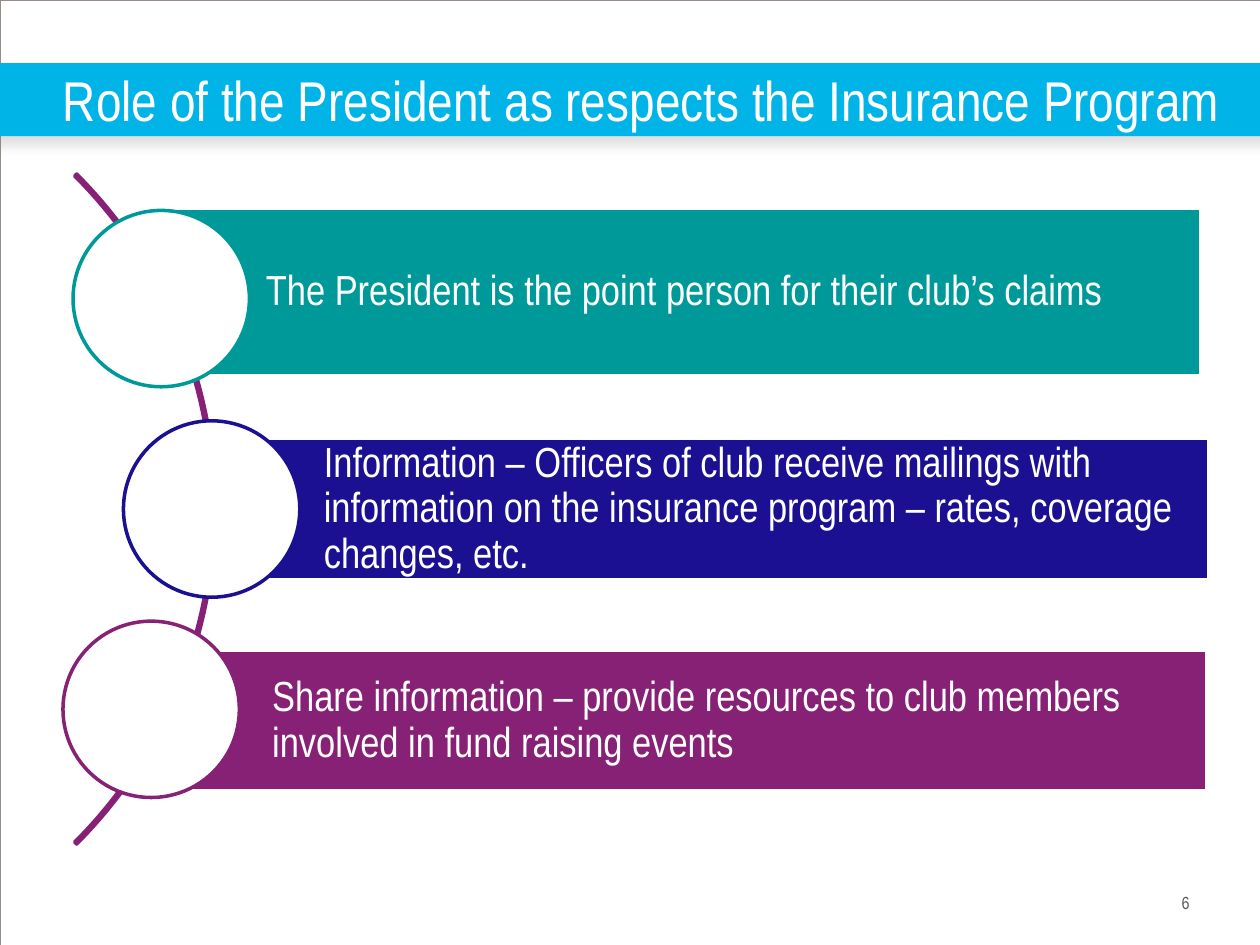
from dataclasses import dataclass

from lxml import etree
from pptx import Presentation
from pptx.dml.color import RGBColor
from pptx.enum.shapes import MSO_SHAPE
from pptx.enum.text import MSO_ANCHOR, PP_ALIGN
from pptx.oxml.ns import qn
from pptx.shapes.autoshape import Shape
from pptx.slide import Slide
from pptx.util import Inches, Pt

RECTANGLE = MSO_SHAPE.RECTANGLE
OVAL = MSO_SHAPE.OVAL
BLOCK_ARC = MSO_SHAPE.BLOCK_ARC
MIDDLE = MSO_ANCHOR.MIDDLE
TOP = MSO_ANCHOR.TOP
LEFT = PP_ALIGN.LEFT
RIGHT = PP_ALIGN.RIGHT

WHITE = RGBColor(0xFF, 0xFF, 0xFF)
SKY = RGBColor(0x01, 0xB4, 0xE7)
TEAL = RGBColor(0x00, 0x99, 0x99)
NAVY = RGBColor(0x1B, 0x10, 0x91)
PLUM = RGBColor(0x87, 0x21, 0x75)
TAUPE = RGBColor(0x95, 0x8D, 0x85)
GRAY = RGBColor(0x58, 0x58, 0x5A)

FONT = "Arial Narrow"
SLIDE_WIDTH = Inches(10)
SLIDE_HEIGHT = Inches(7.5)
COLUMN = SLIDE_WIDTH / 100
ROW = SLIDE_HEIGHT / 75
CIRCLE_SIZE = 14
BAR_INDENT = 8.9
BAR_MARGIN = 0.7


@dataclass(frozen=True)
class Area:
    column: float
    row: float
    columns: float
    rows: float

    def emu(self) -> tuple[int, int, int, int]:
        return (
            round(self.column * COLUMN),
            round(self.row * ROW),
            round(self.columns * COLUMN),
            round(self.rows * ROW),
        )


@dataclass(frozen=True)
class Duty:
    text: str
    color: RGBColor
    bar: Area
    circle_column: float
    circle_row: float


DUTIES = (
    Duty(
        "The President is the point person for their club’s claims",
        TEAL, Area(12.2, 16.5, 83.1, 13.3), 5.8, 16.7,
    ),
    Duty(
        "Information – Officers of club receive mailings with information "
        "on the insurance program – rates, coverage changes, etc.",
        NAVY, Area(16.8, 34.8, 79.1, 11.2), 9.8, 33.4,
    ),
    Duty(
        "Share information – provide resources to club members involved "
        "in fund raising events",
        PLUM, Area(12.7, 51.6, 83.1, 11.2), 5, 49.3,
    ),
)


def add_figure(
    slide: Slide,
    kind: MSO_SHAPE,
    area: Area,
    fill: RGBColor | None = None,
    line: RGBColor | None = None,
    line_width: float = 2,
) -> Shape:
    figure = slide.shapes.add_shape(kind, *area.emu())
    figure.shadow.inherit = False
    if fill is None:
        figure.fill.background()
    else:
        figure.fill.solid()
        figure.fill.fore_color.rgb = fill
    if line is None:
        figure.line.fill.background()
    else:
        figure.line.color.rgb = line
        figure.line.width = Pt(line_width)
    return figure


def write(
    holder: Shape,
    text: str,
    size: float,
    color: RGBColor,
    align: PP_ALIGN = LEFT,
    anchor: MSO_ANCHOR = MIDDLE,
    indent: float = 0,
    margin: float = 0,
    spacing: float = 1,
) -> None:
    frame = holder.text_frame
    frame.word_wrap = True
    frame.vertical_anchor = anchor
    frame.margin_left = round(indent * COLUMN)
    frame.margin_right = round(margin * COLUMN)
    frame.margin_top = frame.margin_bottom = round(margin * ROW)
    paragraph = frame.paragraphs[0]
    paragraph.text = text
    paragraph.alignment = align
    paragraph.line_spacing = spacing
    paragraph.font.name = FONT
    paragraph.font.size = Pt(size)
    paragraph.font.color.rgb = color


def add_band_shadow(band: Shape) -> None:
    effects = band._element.spPr.find(qn("a:effectLst"))
    shadow = etree.SubElement(
        effects, qn("a:outerShdw"),
        blurRad=str(Pt(7)), dist=str(Pt(4.8)), dir="5400000", rotWithShape="0",
    )
    tint = etree.SubElement(shadow, qn("a:srgbClr"), val="808080")
    etree.SubElement(tint, qn("a:alpha"), val="25000")


def add_duty(slide: Slide, duty: Duty) -> None:
    bar = add_figure(slide, RECTANGLE, duty.bar, duty.color, WHITE)
    write(bar, duty.text, 24, WHITE, indent=BAR_INDENT, margin=BAR_MARGIN, spacing=0.9)
    circle = Area(duty.circle_column, duty.circle_row, CIRCLE_SIZE, CIRCLE_SIZE)
    add_figure(slide, OVAL, circle, WHITE, duty.color)


def main() -> None:
    deck = Presentation()
    deck.slide_width = SLIDE_WIDTH
    deck.slide_height = SLIDE_HEIGHT
    slide = deck.slides.add_slide(deck.slide_layouts[6])

    page_number = slide.shapes.add_textbox(*Area(77.5, 70.8, 16.9, 1.7).emu())
    write(page_number, "6", 10, GRAY, align=RIGHT, anchor=TOP)
    add_figure(slide, RECTANGLE, Area(0, 0, 100, 75), line=TAUPE, line_width=0.13)

    band = add_figure(slide, RECTANGLE, Area(-0.8, 5, 101.7, 5.8), SKY)
    add_band_shadow(band)
    title = slide.shapes.add_textbox(*Area(5, 5, 95, 5.8).emu())
    write(title, "Role of the President as respects the Insurance Program", 32, WHITE)

    arc = add_figure(slide, BLOCK_ARC, Area(-58.1, 2.8, 75.2, 75.2), line=PLUM)
    for index, value in enumerate((189, 27, 0.003)):
        arc.adjustments[index] = value

    for duty in DUTIES:
        add_duty(slide, duty)

    deck.save("out.pptx")


if __name__ == "__main__":
    main()
